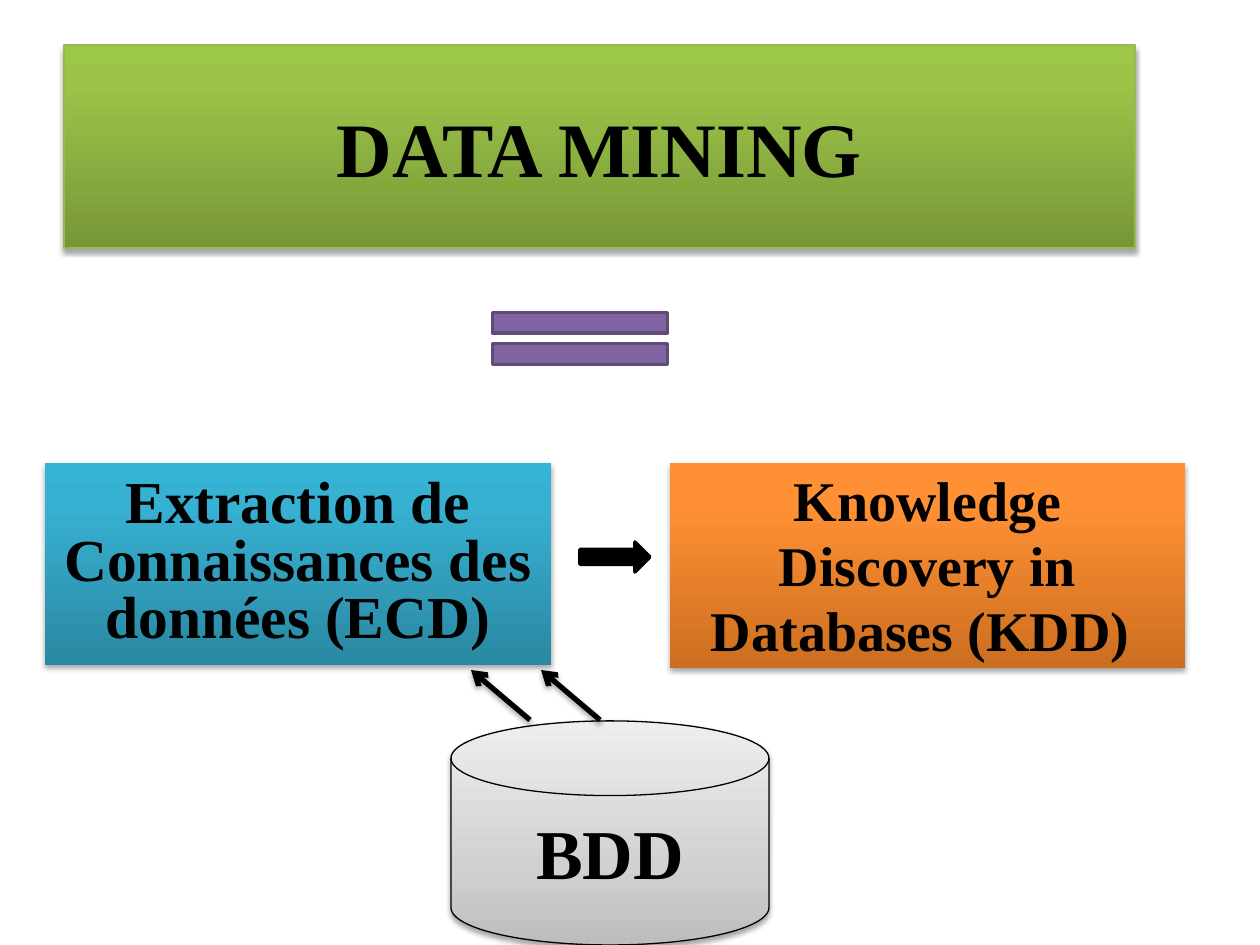
"""Build the slide that equates data mining with knowledge discovery in databases."""
from dataclasses import dataclass

from lxml.etree import SubElement
from pptx import Presentation
from pptx.dml.color import RGBColor
from pptx.enum.shapes import MSO_CONNECTOR, MSO_SHAPE
from pptx.enum.text import MSO_ANCHOR, PP_ALIGN
from pptx.oxml.ns import qn
from pptx.util import Emu, Pt

PIXELS_PER_INCH = 126


def px(length):
    return Emu(round(length * 914400 / PIXELS_PER_INCH))


@dataclass(frozen=True)
class Theme:
    font: str = "Times New Roman"
    ink: str = "000000"
    green: tuple = ((0, "779737"), (80, "9BC348"), (100, "9DC746"))
    green_line: str = "98B955"
    orange: tuple = ((0, "CC6E20"), (80, "FF9034"), (100, "FF9136"))
    blue: tuple = ((0, "2A88A2"), (80, "37B1D2"), (100, "34B4D6"))
    grey: tuple = ((0, "BDBDBD"), (35, "D1D1D1"), (100, "EEEEEE"))
    purple: str = "8064A2"
    purple_line: str = "5F4A78"
    title_size: int = 44
    database_size: int = 40
    french_size: int = 34
    english_size: int = 32


class SlideBuilder:
    def __init__(self, slide, theme):
        self.slide = slide
        self.theme = theme

    def add_color(self, parent, color):
        return SubElement(parent, qn("a:srgbClr"), val=color)

    def add_shadow(self, effects, opacity=35):
        shadow = SubElement(
            effects, qn("a:outerShdw"), blurRad=str(Pt(3.1)), dist=str(Pt(1.8)),
            dir="5400000", rotWithShape="0",
        )
        color = self.add_color(shadow, self.theme.ink)
        SubElement(color, qn("a:alpha"), val=str(opacity * 1000))

    def set_gradient(self, shape, stops):
        shape.fill.gradient()
        shape.fill.gradient_angle = 90
        stop_list = next(shape.element.spPr.iter(qn("a:gsLst")))
        for stop in list(stop_list):
            stop_list.remove(stop)
        for position, color in stops:
            stop = SubElement(stop_list, qn("a:gs"), pos=str(position * 1000))
            self.add_color(stop, color)

    def set_line(self, line, color, width):
        line.color.rgb = RGBColor.from_string(color)
        line.width = Pt(width)

    def add_shape(self, kind, box, fill, line_color=None, line_width=0.75):
        shape = self.slide.shapes.add_shape(kind, *map(px, box))
        shape.shadow.inherit = False
        if line_color:
            self.set_line(shape.line, line_color, line_width)
        else:
            shape.line.fill.background()
        if isinstance(fill, str):
            shape.fill.solid()
            shape.fill.fore_color.rgb = RGBColor.from_string(fill)
        else:
            self.set_gradient(shape, fill)
            self.add_shadow(shape.element.spPr.find(qn("a:effectLst")))
        return shape

    def add_text(self, shape, text, size, anchor=MSO_ANCHOR.MIDDLE, spacing=1.0):
        frame = shape.text_frame
        frame.word_wrap = True
        frame.vertical_anchor = anchor
        paragraph = frame.paragraphs[0]
        paragraph.text = text
        paragraph.alignment = PP_ALIGN.CENTER
        paragraph.line_spacing = spacing
        paragraph.font.name = self.theme.font
        paragraph.font.size = Pt(size)
        paragraph.font.bold = True
        paragraph.font.color.rgb = RGBColor.from_string(self.theme.ink)

    def add_arrow(self, start, end):
        connector = self.slide.shapes.add_connector(
            MSO_CONNECTOR.STRAIGHT, *map(px, start + end)
        )
        self.set_line(connector.line, self.theme.ink, 3)
        properties = connector.element.spPr
        SubElement(properties.find(qn("a:ln")), qn("a:tailEnd"), type="arrow")
        self.add_shadow(SubElement(properties, qn("a:effectLst")))


def main():
    presentation = Presentation()
    presentation.slide_width, presentation.slide_height = px(1260), px(945)
    theme = Theme()
    slide = presentation.slides.add_slide(presentation.slide_layouts[6])
    builder = SlideBuilder(slide, theme)

    title = builder.add_shape(
        MSO_SHAPE.RECTANGLE, (64, 45, 1071, 203), theme.green, theme.green_line
    )
    builder.add_text(title, "DATA MINING", theme.title_size)

    english = builder.add_shape(MSO_SHAPE.RECTANGLE, (670, 463, 515, 205), theme.orange)
    builder.add_text(
        english, "Knowledge Discovery in Databases (KDD) ", theme.english_size,
        MSO_ANCHOR.TOP, spacing=0.97,
    )

    builder.add_shape(
        MSO_SHAPE.MATH_EQUAL, (461, 294, 238, 89), theme.purple, theme.purple_line, 2
    )

    french = builder.add_shape(MSO_SHAPE.RECTANGLE, (45, 463, 506, 202), theme.blue)
    builder.add_text(
        french, "Extraction de Connaissances des données (ECD)", theme.french_size,
        spacing=0.8,
    )

    builder.add_shape(MSO_SHAPE.RIGHT_ARROW, (580, 542, 70, 30), theme.ink, theme.ink, 2)

    database = builder.add_shape(
        MSO_SHAPE.FLOWCHART_MAGNETIC_DISK, (451, 721, 318, 224), theme.grey, theme.ink
    )
    builder.add_text(database, "BDD", theme.database_size)

    for left in (471, 541):
        builder.add_arrow((left + 59, 720), (left, 670))

    presentation.save("out.pptx")


if __name__ == "__main__":
    main()
